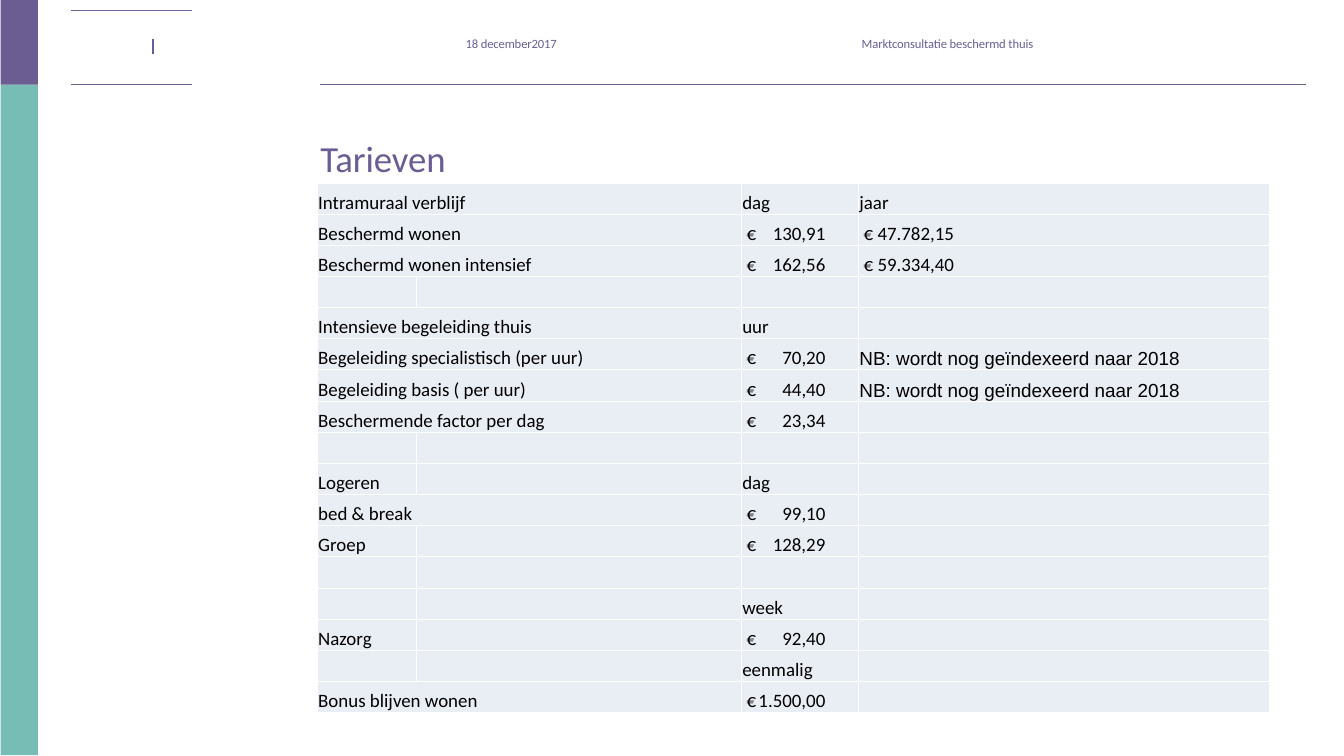
import pptx
import pptx.util
import pptx.dml.color
import pptx.enum.shapes
import pptx.enum.text
import pptx.oxml.xmlchemy

Inches = pptx.util.Inches
OxmlElement = pptx.oxml.xmlchemy.OxmlElement
PURPLE, TEAL, SLATE = "6B5C92", "77BCB5", "686095"
RULE, CELL, WHITE, BLACK = "686296", "E9EDF4", "FFFFFF", "000000"


def color(value):
    return pptx.dml.color.RGBColor.from_string(value)


def write(paragraph, text, size, shade, name="Calibri"):
    run = paragraph.add_run()
    run.text = text
    run.font.color.rgb = color(shade)
    for key, value in {"size": pptx.util.Pt(size), "name": name}.items():
        setattr(run.font, key, value)
    return run


presentation = pptx.Presentation()
presentation.slide_width = Inches(17.78)
presentation.slide_height = Inches(10)
slide = presentation.slides.add_slide(presentation.slide_layouts[6])

for top, height, fill in [(1.12, 8.87, TEAL), (0, 1.12, PURPLE)]:
    shape = slide.shapes.add_shape(
        pptx.enum.shapes.MSO_SHAPE.RECTANGLE,
        Inches(0.01), Inches(top), Inches(0.49), Inches(height))
    shape.shadow.inherit = False
    shape.fill.solid()
    shape.fill.fore_color.rgb = color(fill)
    shape.line.fill.background()

rules = [
    (2.02, 0.52, 2.02, 0.71, SLATE, 2.11),
    (0.94, 0.14, 2.54, 0.14, RULE, 0.67),
    (0.94, 1.12, 2.54, 1.12, RULE, 0.67),
    (4.24, 1.12, 17.28, 1.12, PURPLE, 0.75),
]
for left, top, right, bottom, shade, width in rules:
    connector = slide.shapes.add_connector(
        pptx.enum.shapes.MSO_CONNECTOR.STRAIGHT,
        Inches(left), Inches(top), Inches(right), Inches(bottom))
    connector.line.color.rgb = color(shade)
    connector.line.width = pptx.util.Pt(width)
    connector._element.spPr.append(OxmlElement("a:effectLst"))

texts = [
    (6.15, 0.46, 1.57, 0.22, "18 december2017", 12, SLATE),
    (11.39, 0.46, 2.58, 0.22, "Marktconsultatie beschermd thuis", 12, SLATE),
    (4.23, 1.78, 5.37, 0.62, "Tarieven", 35, PURPLE),
]
frame_format = {
    "word_wrap": True, "margin_left": Inches(0.01), "margin_top": Inches(0.02),
    "margin_right": 0, "margin_bottom": 0,
}
for left, top, width, height, text, size, shade in texts:
    box = slide.shapes.add_textbox(
        Inches(left), Inches(top), Inches(width), Inches(height))
    for key, value in frame_format.items():
        setattr(box.text_frame, key, value)
    run = write(box.text_frame.paragraphs[0], text, size, shade)
    run._r.get_or_add_rPr().set("spc", "-10")

note = "NB: wordt nog geïndexeerd naar 2018"
rates = [
    ("Intramuraal verblijf", "dag", "jaar"),
    ("Beschermd wonen", " €\t130,91", " € 47.782,15"),
    ("Beschermd wonen intensief", " €\t162,56", " € 59.334,40"),
    ("", "", ""),
    ("Intensieve begeleiding thuis", "uur", ""),
    ("Begeleiding specialistisch (per uur)", " €\t70,20", note),
    ("Begeleiding basis ( per uur)", " €\t44,40", note),
    ("Beschermende factor per dag", " €\t23,34", ""),
    ("", "", ""),
    ("Logeren", "dag", ""),
    ("bed & break", " €\t99,10", ""),
    ("Groep", " €\t128,29", ""),
    ("", "", ""),
    ("", "week", ""),
    ("Nazorg", " €\t92,40", ""),
    ("", "eenmalig", ""),
    ("Bonus blijven wonen", " €\t1.500,00", ""),
]
column_widths = [1.31, 4.3, 1.55, 5.44]
table_height = 7.01
table = slide.shapes.add_table(
    len(rates), len(column_widths), Inches(4.2), Inches(2.42),
    Inches(sum(column_widths)), Inches(table_height)).table
table.first_row = False
table.horz_banding = False
for column, width in zip(table.columns, column_widths):
    column.width = Inches(width)

cell_format = {
    "margin_left": Inches(0.01), "margin_top": Inches(0.01),
    "margin_right": Inches(0.01), "margin_bottom": 0,
    "vertical_anchor": pptx.enum.text.MSO_ANCHOR.BOTTOM,
}
for row, (label, price, remark) in enumerate(rates):
    table.rows[row].height = Inches(table_height / len(rates))
    for column, text in enumerate([label, "", price, remark]):
        cell = table.cell(row, column)
        for key, value in cell_format.items():
            setattr(cell, key, value)
        properties = cell._tc.get_or_add_tcPr()
        for side in ["a:lnL", "a:lnR", "a:lnT", "a:lnB"]:
            border = OxmlElement(side)
            border.set("w", str(pptx.util.Pt(1)))
            solid = OxmlElement("a:solidFill")
            shade = OxmlElement("a:srgbClr")
            shade.set("val", WHITE)
            solid.append(shade)
            border.append(solid)
            properties.append(border)
        cell.fill.solid()
        cell.fill.fore_color.rgb = color(CELL)
        paragraph = cell.text_frame.paragraphs[0]
        if "\t" in text:
            tabs = OxmlElement("a:tabLst")
            tab = OxmlElement("a:tab")
            tab.set("pos", str(Inches(1.1)))
            tab.set("algn", "r")
            tabs.append(tab)
            paragraph._p.get_or_add_pPr().append(tabs)
        if text:
            write(paragraph, text, 18, BLACK, "Arial" if text == note else "Calibri")
    if len(label) > len("Logeren"):
        table.cell(row, 0).merge(table.cell(row, 1))

presentation.save("out.pptx")
